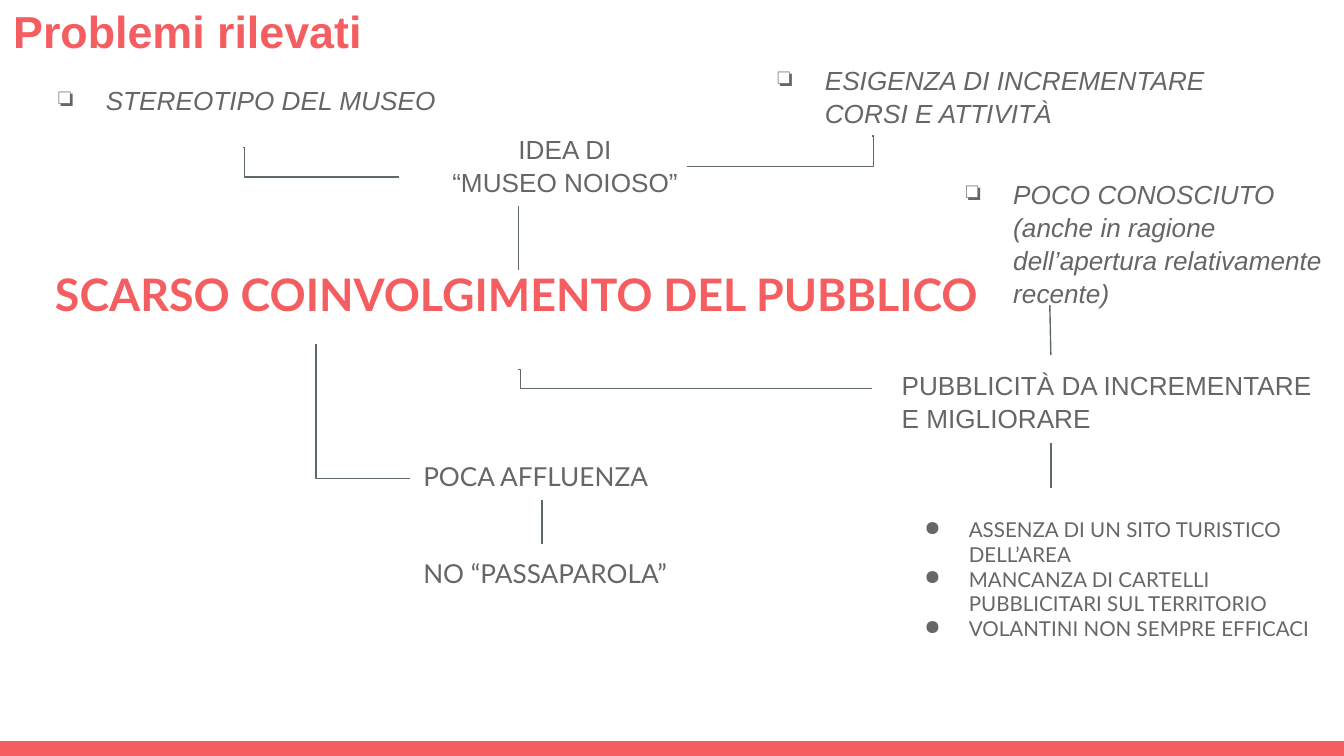
from lxml import etree
from pptx import Presentation
from pptx.dml.color import RGBColor
from pptx.enum.shapes import MSO_CONNECTOR, MSO_SHAPE
from pptx.enum.text import MSO_ANCHOR, PP_ALIGN
from pptx.oxml.ns import qn
from pptx.util import Cm, Pt

STRAIGHT, ELBOW = MSO_CONNECTOR.STRAIGHT, MSO_CONNECTOR.ELBOW
RECT = MSO_SHAPE.RECTANGLE
TOP, MIDDLE = MSO_ANCHOR.TOP, MSO_ANCHOR.MIDDLE
LEFT, CENTER = PP_ALIGN.LEFT, PP_ALIGN.CENTER

WIDTH, HEIGHT, BAR = 25.4, 14.29, 0.28
CORAL, GREY, SLATE = "F55E61", "666666", "5E696C"

STYLES = {
    "title": dict(font="Arial", size=24, color=CORAL, bold=True, anchor=MIDDLE),
    "core": dict(font="Lato", size=24, color=CORAL, bold=True),
    "cause": dict(font="Arial", size=14, italic=True, spacing=1.05, bullet="❏", hang=0.89),
    "idea": dict(font="Arial", size=14, align=CENTER, spacing=1.05),
    "issue": dict(font="Arial", size=14, spacing=1.05),
    "effect": dict(font="Lato", size=14),
    "detail": dict(font="Lato", size=11, bullet="●", hang=0.84),
}

TEXTS = [
    ("cause", (0.48, 1.32, 8.23, 1.45), ["STEREOTIPO DEL MUSEO"]),
    ("idea", (8, 2.24, 5.36, 1.65), ["IDEA DI", "“MUSEO NOIOSO”"]),
    ("cause", (14.07, 0.94, 10.72, 1.65), ["ESIGENZA DI INCREMENTARE \nCORSI E ATTIVITÀ"]),
    ("cause", (17.63, 3.1, 7.72, 1.22),
     ["POCO CONOSCIUTO\n(anche in ragione dell’apertura relativamente recente)"]),
    ("issue", (16.79, 6.71, 8.56, 1.14), ["PUBBLICITÀ DA INCREMENTARE E MIGLIORARE"]),
    ("core", (0.79, 4.8, 17.96, 1.45), ["SCARSO COINVOLGIMENTO DEL PUBBLICO"]),
    ("detail", (16.79, 9.53, 8.23, 2.53), [
        "ASSENZA DI UN SITO TURISTICO DELL’AREA",
        "MANCANZA DI CARTELLI PUBBLICITARI SUL TERRITORIO",
        "VOLANTINI NON SEMPRE EFFICACI",
    ]),
    ("effect", (7.75, 8.46, 7.26, 1.14), ["POCA AFFLUENZA"]),
    ("effect", (7.75, 10.29, 7.14, 1.65), ["NO “PASSAPAROLA”"]),
    ("title", (0, 0, WIDTH, 1.14), ["Problemi rilevati"]),
]

LINKS = [
    (9.8, 5.11, 9.8, 3.89),
    (19.86, 6.71, 19.84, 5.77),
    (19.86, 8.38, 19.86, 9.22),
    (10.24, 9.45, 10.24, 10.29),
]

BENDS = [
    ((4.6, 2.79, 7.54, 3.35), 600),
    ((16.48, 2.57, 12.98, 3.15), -1000),
    ((9.8, 6.99, 16.48, 7.34), 500),
    ((5.97, 6.5, 7.75, 9.05), 0),
]


def rgb(value):
    return RGBColor.from_string(value)


def add_bullet(p, char, hang, color):
    pPr = p._p.get_or_add_pPr()
    pPr.set("marL", str(Cm(1.27)))
    pPr.set("indent", str(-Cm(hang)))
    clr = etree.SubElement(pPr, qn("a:buClr"))
    etree.SubElement(clr, qn("a:srgbClr"), val=color)
    etree.SubElement(pPr, qn("a:buChar"), char=char)


def add_text(s, box, paragraphs, font, size, color=GREY, bold=False, italic=False,
             anchor=TOP, align=LEFT, spacing=1.0, bullet=None, hang=0):
    tf = s.shapes.add_textbox(*map(Cm, box)).text_frame
    tf.word_wrap = True
    tf.vertical_anchor = anchor
    tf.margin_left = tf.margin_right = tf.margin_top = tf.margin_bottom = Cm(0.25)
    for i, text in enumerate(paragraphs):
        p = tf.add_paragraph() if i else tf.paragraphs[0]
        p.alignment = align
        p.line_spacing = spacing
        if bullet:
            add_bullet(p, bullet, hang, color)
        for j, line in enumerate(text.split("\n")):
            if j:
                p.add_line_break()
            r = p.add_run()
            r.text = line
            r.font.name, r.font.size = font, Pt(size)
            r.font.bold, r.font.italic = bold, italic
            r.font.color.rgb = rgb(color)


def add_link(s, kind, ends, bend=None):
    link = s.shapes.add_connector(kind, *map(Cm, ends))
    link.line.color.rgb = rgb(SLATE)
    link.line.width = Pt(0.75)
    spPr = link._element.spPr
    etree.SubElement(spPr, qn("a:effectLst"))
    if bend is not None:
        guides = spPr.find(qn("a:prstGeom")).find(qn("a:avLst"))
        etree.SubElement(guides, qn("a:gd"), name="adj1", fmla=f"val {bend}")


prs = Presentation()
prs.slide_width, prs.slide_height = Cm(WIDTH), Cm(HEIGHT)
s = prs.slides.add_slide(prs.slide_layouts[6])

bar = s.shapes.add_shape(RECT, 0, Cm(HEIGHT - BAR), Cm(WIDTH), Cm(BAR))
bar.shadow.inherit = False
bar.fill.solid()
bar.fill.fore_color.rgb = rgb(CORAL)
bar.line.fill.background()

for style, box, paragraphs in TEXTS:
    add_text(s, box, paragraphs, **STYLES[style])
for ends in LINKS:
    add_link(s, STRAIGHT, ends)
for ends, bend in BENDS:
    add_link(s, ELBOW, ends, bend)

prs.save("out.pptx")
